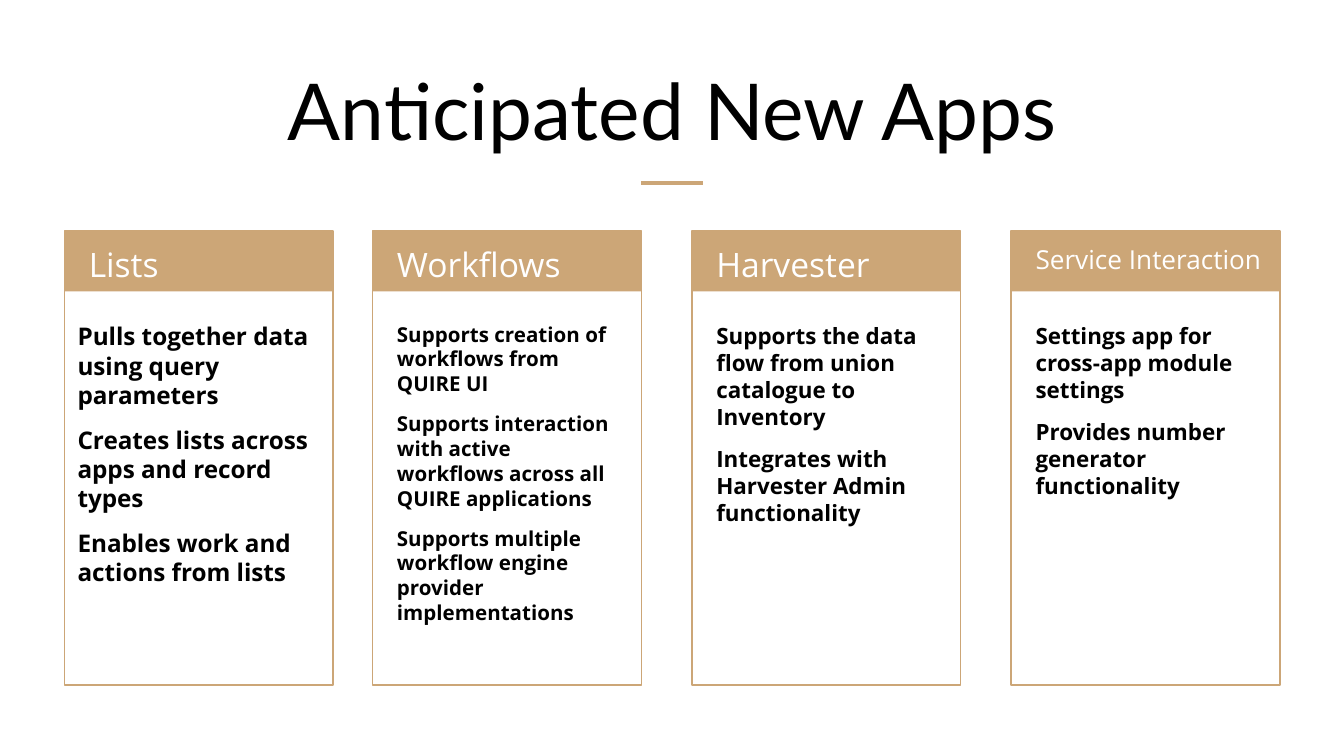
from pptx import Presentation
from pptx.dml.color import RGBColor
from pptx.enum.shapes import MSO_CONNECTOR, MSO_SHAPE
from pptx.enum.text import MSO_ANCHOR, PP_ALIGN
from pptx.oxml.ns import qn
from pptx.util import Pt

RECT = MSO_SHAPE.RECTANGLE
STRAIGHT = MSO_CONNECTOR.STRAIGHT
TOP, BOTTOM = MSO_ANCHOR.TOP, MSO_ANCHOR.BOTTOM
LEFT, CENTER = PP_ALIGN.LEFT, PP_ALIGN.CENTER

COLORS = {"accent": "CCA677", "ink": "000000", "paper": "FFFFFF"}
TITLE = "Anticipated New Apps"
CARDS = [
    {"name": "Lists", "left": 34.5, "name_size": 18, "size": 13,
     "inset": 0, "width": 144,
     "points": ["Pulls together data using query parameters",
                "Creates lists across apps and record types",
                "Enables work and actions from lists"]},
    {"name": "Workflows", "left": 199.6, "name_size": 18, "size": 11,
     "inset": 6, "width": 130.5,
     "points": ["Supports creation of workflows from QUIRE UI",
                "Supports interaction with active workflows across all "
                "QUIRE applications",
                "Supports multiple workflow engine provider implementations"]},
    {"name": "Harvester", "left": 370.7, "name_size": 18, "size": 12,
     "inset": 6, "width": 130.5,
     "points": ["Supports the data flow from union catalogue to Inventory",
                "Integrates with Harvester Admin functionality"]},
    {"name": "Service Interaction", "left": 541.7, "name_size": 14, "size": 12,
     "inset": 6, "width": 130.5,
     "points": ["Settings app for cross-app module settings",
                "Provides number generator functionality"]},
]
SLIDE_W, SLIDE_H = 720, 405
CARD_TOP, CARD_W, CARD_H, HEAD_H = 123.7, 144, 243.3, 32.4
NAME_INSET, NAME_W = 6, 138
BODY_TOP, BODY_H = 165, 201.6
MARGIN, LINE_SPACING, GAP = 7.2, 1.01, 8
RULE_W, RULE_Y = 33, 98


def rgb(name):
    return RGBColor.from_string(COLORS[name])


def add_text(shapes, box, texts, font, color, align=LEFT, anchor=TOP,
             spacing=LINE_SPACING):
    tf = shapes.add_textbox(*map(Pt, box)).text_frame
    tf.word_wrap = True
    tf.vertical_anchor = anchor
    for side in ("left", "top", "right", "bottom"):
        setattr(tf, f"margin_{side}", Pt(MARGIN))
    for i, text in enumerate(texts):
        p = tf.add_paragraph() if i else tf.paragraphs[0]
        p.alignment, p.line_spacing = align, spacing
        p.space_before = Pt(GAP if i else 0)
        r = p.add_run()
        r.text = text
        for key, value in font.items():
            setattr(r.font, key, value)
        r.font.color.rgb = rgb(color)


def add_panel(shapes, box, fill=None, line=None):
    sp = shapes.add_shape(RECT, *map(Pt, box))
    sp.shadow.inherit = False
    if fill:
        sp.fill.solid()
        sp.fill.fore_color.rgb = rgb(fill)
    else:
        sp.fill.background()
    if line:
        sp.line.color.rgb = rgb(line)
        sp.line.width = Pt(0.75)
    else:
        sp.line.fill.background()


def add_card(shapes, card):
    left = card["left"]
    group = shapes.add_group_shape()
    add_panel(group.shapes, (left, CARD_TOP, CARD_W, CARD_H), line="accent")
    add_panel(group.shapes, (left, CARD_TOP, CARD_W, HEAD_H), fill="accent")
    add_text(shapes, (left + NAME_INSET, CARD_TOP - 0.5, NAME_W, HEAD_H),
             [card["name"]],
             {"name": "Open Sans", "size": Pt(card["name_size"])}, "paper")
    add_text(shapes, (left + card["inset"], BODY_TOP, card["width"], BODY_H),
             card["points"],
             {"name": "Open Sans", "size": Pt(card["size"]), "bold": True}, "ink")


def main():
    prs = Presentation()
    prs.slide_width, prs.slide_height = Pt(SLIDE_W), Pt(SLIDE_H)
    shapes = prs.slides.add_slide(prs.slide_layouts[6]).shapes

    add_text(shapes, (24.5, 25.2, 671, 65.5), [TITLE],
             {"name": "Lato", "size": Pt(42)}, "ink", CENTER, BOTTOM, 1.0)

    start = (SLIDE_W - RULE_W) / 2
    rule = shapes.add_connector(STRAIGHT, Pt(start), Pt(RULE_Y),
                                Pt(start + RULE_W), Pt(RULE_Y))
    rule.line.color.rgb = rgb("accent")
    rule.line.width = Pt(2.25)
    sp_pr = rule._element.spPr
    sp_pr.append(sp_pr.makeelement(qn("a:effectLst"), {}))

    for card in CARDS:
        add_card(shapes, card)
    prs.save("out.pptx")


if __name__ == "__main__":
    main()
